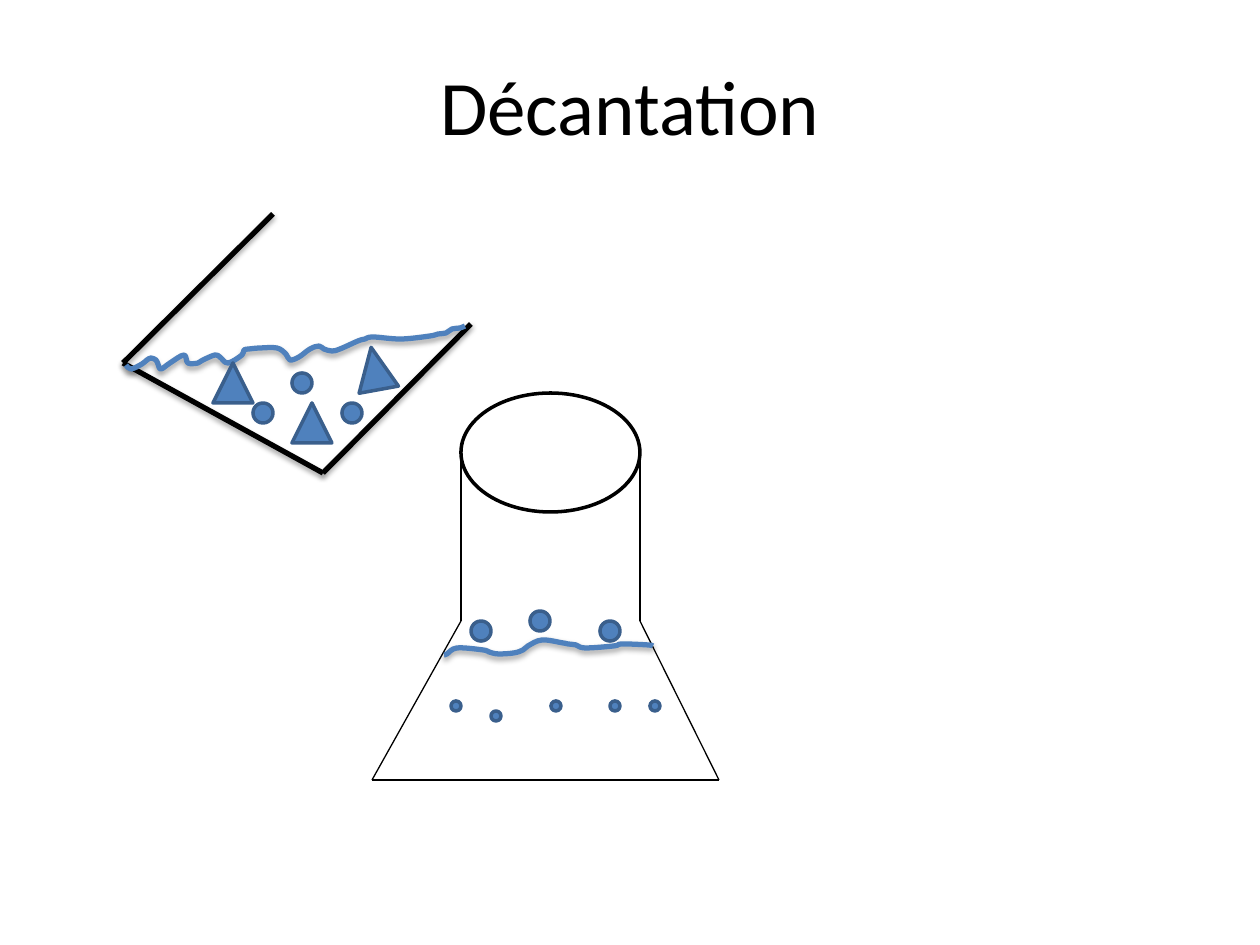
from lxml.etree import SubElement
from pptx import Presentation
from pptx.dml.color import RGBColor
from pptx.enum.shapes import MSO_CONNECTOR, MSO_SHAPE
from pptx.enum.text import MSO_ANCHOR, PP_ALIGN
from pptx.oxml.ns import qn
from pptx.util import Emu, Pt

PX_PER_INCH = 126
BLACK, BLUE, DARK_BLUE = "000000", "4F81BD", "3A5F8C"

JAR_SIDES = [(273, 214, 123, 363), (323, 473, 123, 363), (471, 324, 323, 473)]
JAR_WAVE = [
    (126, 365), (131, 369), (142, 364), (147, 360), (151, 358), (156, 360),
    (158, 364), (161, 369), (170, 363), (184, 355), (188, 363), (198, 363),
    (203, 360), (215, 355), (220, 357), (228, 363), (242, 355), (244, 350),
    (249, 349), (260, 348), (277, 348), (286, 354), (290, 360), (299, 357),
    (310, 349), (319, 346), (324, 349), (332, 351), (340, 349), (358, 341),
    (365, 339), (373, 337), (401, 339), (430, 336), (438, 334), (446, 333),
    (452, 329), (460, 328), (465, 326)]
JAR_TRIANGLES = [(292, 403, 40, 40, 0), (355, 347, 40, 43, 349.7),
                 (213, 363, 40, 40, 0)]
JAR_BALLS = [(342, 403), (253, 403), (292, 373)]

FLASK_OUTLINE = [(461, 452), (461, 621), (372, 780), (719, 780), (640, 621), (640, 452)]
FLASK_WAVE = [
    (444, 655), (447, 654), (457, 648), (483, 650), (489, 652), (498, 654),
    (514, 653), (523, 650), (528, 646), (542, 640), (563, 643), (568, 644),
    (576, 645), (585, 648), (614, 646), (622, 644), (648, 645), (653, 646)]
FLASK_GRAINS = [(451, 701), (491, 711), (551, 701), (610, 701), (650, 701)]
FLASK_BALLS = [(471, 621), (530, 611), (600, 621)]


def px(length):
    return Emu(round(length * 914400 / PX_PER_INCH))


def rgb(color):
    return RGBColor.from_string(color)


def set_format(target, values):
    for name, value in values.items():
        setattr(target, name, value)


def set_line(shape, color, width, shadow=False):
    """Set the line and replace the theme's effects by a soft shadow or none."""
    shape.line.color.rgb = rgb(color)
    shape.line.width = Pt(width)
    effects = SubElement(shape._element.spPr, qn("a:effectLst"))
    if shadow:
        outer = SubElement(effects, qn("a:outerShdw"), blurRad="40000",
                           dist="23000", dir="5400000", rotWithShape="0")
        tint = SubElement(outer, qn("a:srgbClr"), val=BLACK)
        SubElement(tint, qn("a:alpha"), val="35000")


def add_title(page, text):
    title = page.shapes.title
    set_format(title, {"left": px(0), "top": px(26), "width": px(1134), "height": px(158)})
    title.text_frame.vertical_anchor = MSO_ANCHOR.MIDDLE
    para = title.text_frame.paragraphs[0]
    para.alignment = PP_ALIGN.CENTER
    para._p.get_or_add_pPr().set("defTabSz", str(px(PX_PER_INCH)))
    span = para.add_run()
    span.text = text
    set_format(span.font, {"name": "Calibri", "size": Pt(44)})
    span.font.color.rgb = rgb(BLACK)


def add_segment(shapes, ends, width, shadow=False):
    segment = shapes.add_connector(MSO_CONNECTOR.STRAIGHT, *map(px, ends))
    set_line(segment, BLACK, width, shadow)


def smooth(freeform):
    """Turn the straight steps into curves whose tangents follow the neighbours."""
    outline = next(freeform._element.spPr.iter(qn("a:path")))
    points = [(int(pt.get("x")), int(pt.get("y"))) for pt in outline.iter(qn("a:pt"))]
    for step in outline.findall(qn("a:lnTo")):
        outline.remove(step)
    padded = points[:1] + points + points[-1:]
    for before, start, end, after in zip(padded, padded[1:], padded[2:], padded[3:]):
        leave = [s + (e - b) // 6 for b, s, e in zip(before, start, end)]
        arrive = [e - (a - s) // 6 for s, e, a in zip(start, end, after)]
        curve = SubElement(outline, qn("a:cubicBezTo"))
        for x, y in (leave, arrive, end):
            SubElement(curve, qn("a:pt"), x=str(x), y=str(y))


def add_wave(shapes, points):
    start, *rest = [(px(x), px(y)) for x, y in points]
    builder = shapes.build_freeform(*start)
    builder.add_line_segments(rest, close=False)
    wave = builder.convert_to_shape()
    smooth(wave)
    wave.fill.background()
    set_line(wave, BLUE, 3, shadow=True)


def add_particle(shapes, kind, left, top, width, height, rotation=0):
    particle = shapes.add_shape(kind, px(left), px(top), px(width), px(height))
    particle.rotation = rotation
    particle.fill.solid()
    particle.fill.fore_color.rgb = rgb(BLUE)
    set_line(particle, DARK_BLUE, 2)


def add_balls(shapes, corners, size):
    for left, top in corners:
        add_particle(shapes, MSO_SHAPE.OVAL, left, top, size, size)


def add_jar(shapes):
    for ends in JAR_SIDES:
        add_segment(shapes, ends, 3, shadow=True)
    add_wave(shapes, JAR_WAVE)
    for triangle in JAR_TRIANGLES:
        add_particle(shapes, MSO_SHAPE.ISOSCELES_TRIANGLE, *triangle)
    add_balls(shapes, JAR_BALLS, 20)


def add_flask(shapes):
    mouth = shapes.add_shape(MSO_SHAPE.OVAL, px(461), px(393), px(179), px(119))
    mouth.fill.background()
    set_line(mouth, BLACK, 2)
    parts = shapes.add_group_shape().shapes
    for start, end in zip(FLASK_OUTLINE, FLASK_OUTLINE[1:]):
        add_segment(parts, start + end, 0.75)
    add_wave(parts, FLASK_WAVE)
    add_balls(parts, FLASK_GRAINS, 10)
    add_balls(parts, FLASK_BALLS, 20)


def main():
    deck = Presentation()
    set_format(deck, {"slide_width": px(1260), "slide_height": px(945)})
    page = deck.slides.add_slide(deck.slide_layouts[5])
    add_title(page, "\tDécantation")
    add_jar(page.shapes)
    add_flask(page.shapes)
    deck.save("out.pptx")


if __name__ == "__main__":
    main()
